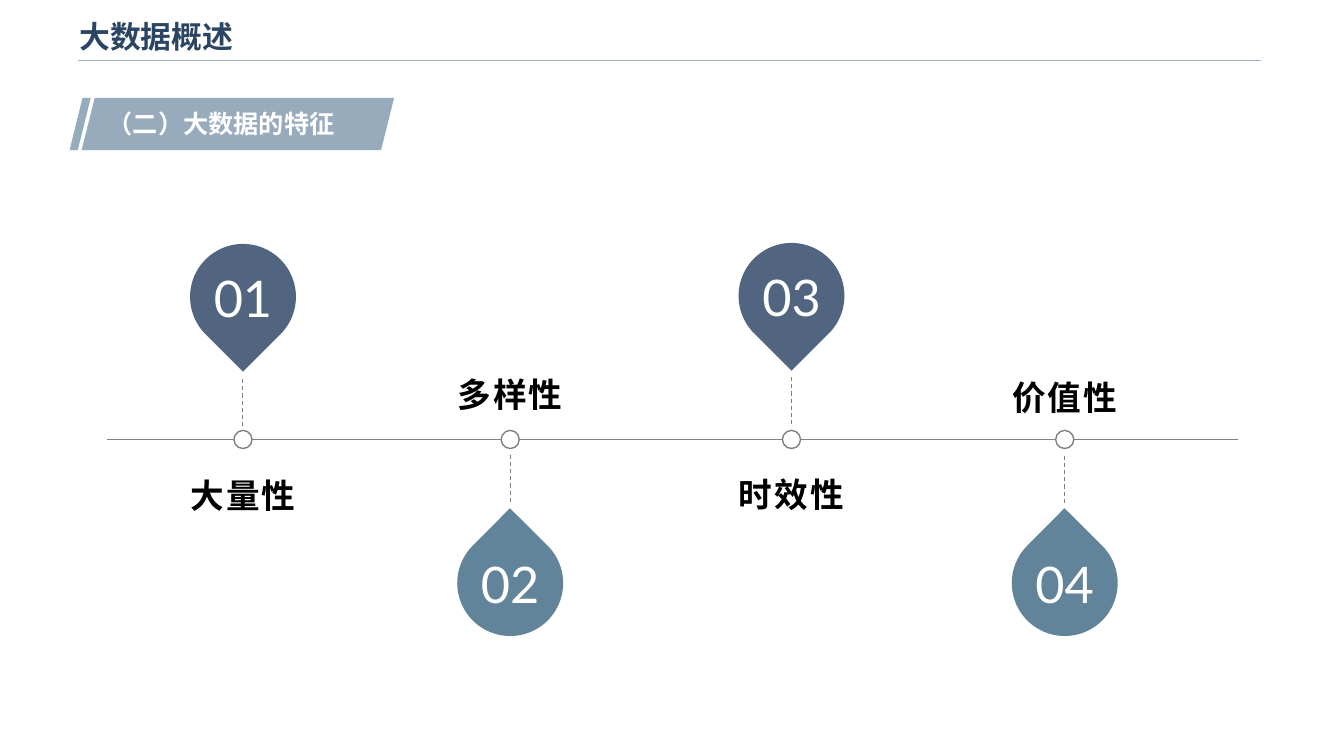
from dataclasses import dataclass

from lxml.etree import SubElement
from pptx import Presentation
from pptx.dml.color import RGBColor
from pptx.enum.dml import MSO_LINE
from pptx.enum.shapes import MSO_CONNECTOR, MSO_SHAPE
from pptx.enum.text import MSO_ANCHOR, PP_ALIGN
from pptx.oxml.ns import qn
from pptx.util import Inches, Pt


@dataclass(frozen=True)
class Theme:
    title: str = "2B4663"
    title_rule: str = "98B4D2"
    banner_edge: str = "94ACBC"
    banner: str = "97ABBD"
    upper_pin: str = "526580"
    lower_pin: str = "61849B"
    axis: str = "808080"
    label: str = "000000"
    white: str = "FFFFFF"
    latin: str = "Arial"
    cjk: str = "Noto Sans CJK SC"
    digits: str = "Lato"
    title_size: int = 22
    banner_size: int = 18
    number_size: int = 36
    label_size: int = 24


THEME = Theme()
AXIS_Y = 4.36
PIN = 1.05
NUMBER_BOX = 0.79
DOT = 0.18
LABEL_W, LABEL_H = 2.07, 0.88
DASH = 0.47

FEATURES = [
    ("01", "大量性", 2.41, 2.42, 4.63, 3.76),
    ("02", "多样性", 5.06, 5.26, 3.23, 4.51),
    ("03", "时效性", 7.85, 2.41, 4.62, 3.74),
    ("04", "价值性", 10.56, 5.26, 3.26, 4.52),
]


def add_text(s, text, x, y, w, h, *, size, color, font=THEME.latin, bold=False,
             align=PP_ALIGN.LEFT, anchor=MSO_ANCHOR.TOP, inset=True,
             line_spacing=None, tracking=None):
    tf = s.shapes.add_textbox(Inches(x), Inches(y), Inches(w), Inches(h)).text_frame
    tf.word_wrap = True
    tf.vertical_anchor = anchor
    if not inset:
        tf.margin_left = tf.margin_right = tf.margin_top = tf.margin_bottom = 0
    p = tf.paragraphs[0]
    p.alignment = align
    if line_spacing:
        p.line_spacing = line_spacing
    r = p.add_run()
    r.text = text
    r.font.name = font
    r.font.size = Pt(size)
    r.font.bold = bold
    r.font.color.rgb = RGBColor.from_string(color)
    rpr = r.font._element
    SubElement(rpr, qn("a:ea")).set("typeface", THEME.cjk)
    if tracking:
        rpr.set("spc", str(round(tracking * 100)))


def add_shape(shapes, kind, x, y, w, h, fill, *, line=None, adjust=None, rotation=0):
    sp = shapes.add_shape(kind, Inches(x), Inches(y), Inches(w), Inches(h))
    sp.shadow.inherit = False
    sp.fill.solid()
    sp.fill.fore_color.rgb = RGBColor.from_string(fill)
    if line:
        sp.line.color.rgb = RGBColor.from_string(line)
        sp.line.width = Pt(1)
    else:
        sp.line.fill.background()
    if adjust is not None:
        sp.adjustments[0] = adjust
    sp.rotation = rotation


def add_line(s, x1, y1, x2, y2, color, width=1, dashed=False):
    line = s.shapes.add_connector(
        MSO_CONNECTOR.STRAIGHT, Inches(x1), Inches(y1), Inches(x2), Inches(y2))
    line.line.color.rgb = RGBColor.from_string(color)
    line.line.width = Pt(width)
    if dashed:
        line.line.dash_style = MSO_LINE.DASH
    SubElement(line._element.spPr, qn("a:effectLst"))


def add_header(s):
    add_line(s, 0.77, 0.6, 12.51, 0.6, THEME.title_rule)
    add_text(s, "大数据概述", 0.69, 0.09, 10.71, 0.53, size=THEME.title_size,
             color=THEME.title, bold=True, anchor=MSO_ANCHOR.MIDDLE)


def add_banner(s):
    group = s.shapes.add_group_shape()
    add_shape(group.shapes, MSO_SHAPE.PARALLELOGRAM, 0.69, 0.97, 0.21, 0.52,
              THEME.banner_edge, adjust=0.613)
    add_shape(group.shapes, MSO_SHAPE.PARALLELOGRAM, 0.81, 0.97, 3.1, 0.52,
              THEME.banner, adjust=0.25)
    add_text(s, "（二）大数据的特征", 0.97, 1.03, 2.78, 0.4, size=THEME.banner_size,
             color=THEME.white, font=THEME.cjk, bold=True)


def add_feature(s, number, name, x, pin_y, label_y, dash_y):
    upper = pin_y < AXIS_Y
    add_shape(s.shapes, MSO_SHAPE.TEAR, x - PIN / 2, pin_y, PIN, PIN,
              THEME.upper_pin if upper else THEME.lower_pin,
              rotation=135 if upper else 314.8)
    add_text(s, number, x - NUMBER_BOX / 2, pin_y + (PIN - NUMBER_BOX) / 2,
             NUMBER_BOX, NUMBER_BOX, size=THEME.number_size, color=THEME.white,
             font=THEME.digits, align=PP_ALIGN.CENTER,
             anchor=MSO_ANCHOR.MIDDLE, inset=False)
    add_line(s, x, dash_y, x, dash_y + DASH, THEME.axis, 0.75, dashed=True)
    add_shape(s.shapes, MSO_SHAPE.OVAL, x - DOT / 2, AXIS_Y - DOT / 2, DOT, DOT,
              THEME.white, line=THEME.axis)
    add_text(s, name, x - LABEL_W / 2, label_y, LABEL_W, LABEL_H,
             size=THEME.label_size, color=THEME.label, bold=True,
             align=PP_ALIGN.CENTER, inset=False, line_spacing=1.2, tracking=1.5,
             anchor=MSO_ANCHOR.TOP if upper else MSO_ANCHOR.BOTTOM)


def main():
    prs = Presentation()
    prs.slide_width, prs.slide_height = Inches(13.33), Inches(7.5)
    s = prs.slides.add_slide(prs.slide_layouts[6])
    add_header(s)
    add_banner(s)
    add_line(s, 1.06, AXIS_Y, 12.28, AXIS_Y, THEME.axis)
    for feature in FEATURES:
        add_feature(s, *feature)
    prs.save("out.pptx")


if __name__ == "__main__":
    main()
